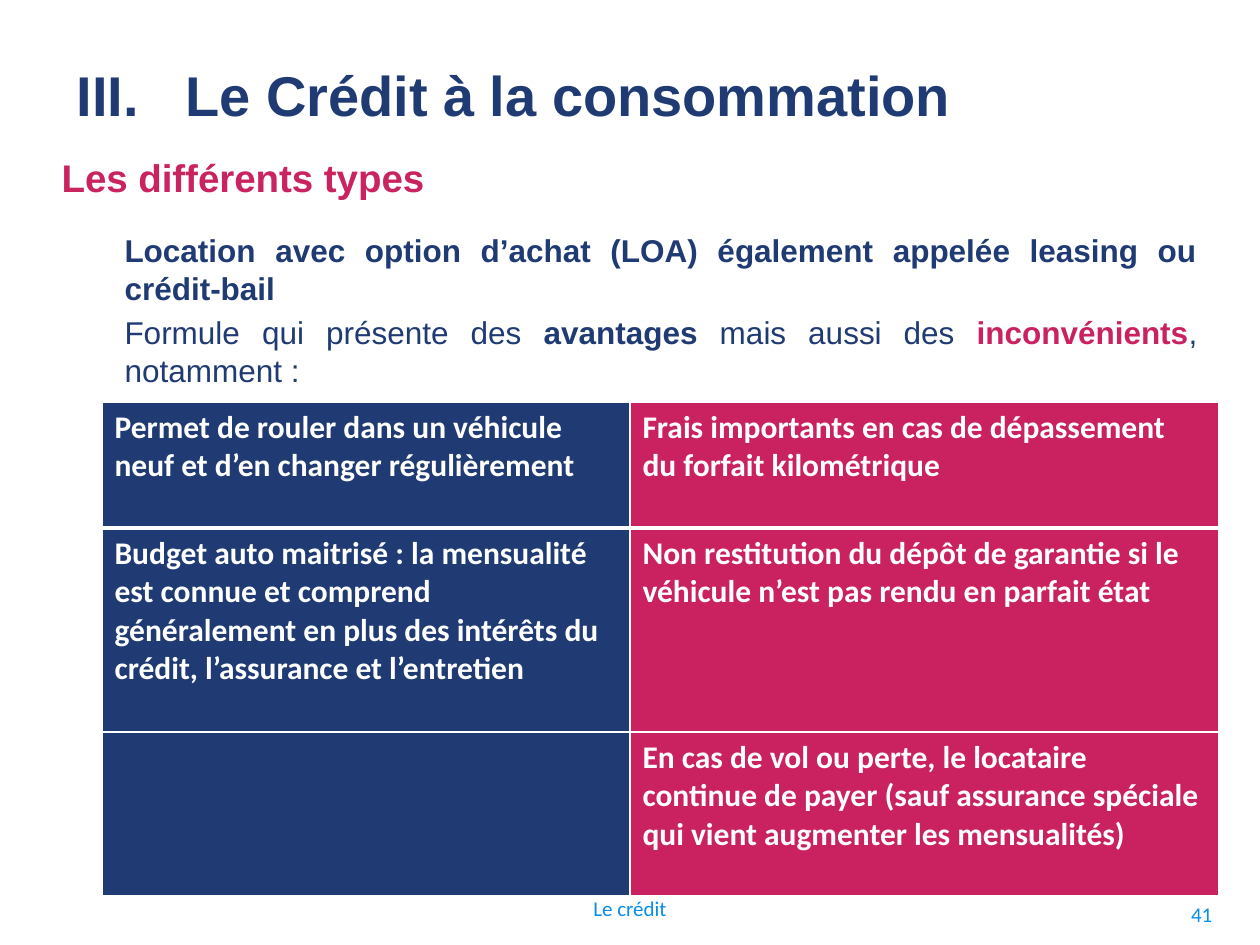
from dataclasses import dataclass

from lxml import etree
from pptx import Presentation
from pptx.dml.color import RGBColor
from pptx.enum.text import MSO_ANCHOR, PP_ALIGN
from pptx.oxml.ns import qn
from pptx.util import Inches, Pt

LEFT, CENTER, RIGHT, JUSTIFY = PP_ALIGN.LEFT, PP_ALIGN.CENTER, PP_ALIGN.RIGHT, PP_ALIGN.JUSTIFY
TOP, MIDDLE = MSO_ANCHOR.TOP, MSO_ANCHOR.MIDDLE


@dataclass(frozen=True)
class Theme:
    navy: str = "203B73"
    pink: str = "CA2260"
    heading_pink: str = "C92360"
    azure: str = "078EE9"
    white: str = "FFFFFF"
    heading_font: str = "Arial"
    table_font: str = "Calibri"
    title_size: int = 32
    subtitle_size: int = 22
    body_size: int = 18
    footer_size: int = 12


THEME = Theme()


@dataclass(frozen=True)
class Span:
    text: str
    size: int = THEME.body_size
    color: str = THEME.navy
    bold: bool = False
    font: str = THEME.heading_font


@dataclass(frozen=True)
class Line:
    spans: tuple[Span, ...]
    align: PP_ALIGN = LEFT
    before: float = 0
    indent: float = 0


@dataclass(frozen=True)
class Block:
    left: float
    top: float
    width: float
    height: float
    lines: tuple[Line, ...]
    anchor: MSO_ANCHOR = TOP


def write_line(paragraph, line: Line) -> None:
    if line.indent:
        properties = paragraph._p.get_or_add_pPr()
        properties.set("marL", str(Inches(line.indent)))
        properties.set("indent", "0")
    paragraph.alignment = line.align
    paragraph.space_before = Pt(line.before)
    for span in line.spans:
        run = paragraph.add_run()
        run.text = span.text
        run.font.name = span.font
        run.font.size = Pt(span.size)
        run.font.bold = span.bold
        run.font.color.rgb = RGBColor.from_string(span.color)


def draw_block(slide, block: Block) -> None:
    box = slide.shapes.add_textbox(
        Inches(block.left), Inches(block.top), Inches(block.width), Inches(block.height)
    )
    frame = box.text_frame
    frame.word_wrap = True
    frame.vertical_anchor = block.anchor
    for index, line in enumerate(block.lines):
        write_line(frame.add_paragraph() if index else frame.paragraphs[0], line)


def set_border(cell, side: str, width: float) -> None:
    edge = etree.SubElement(cell._tc.get_or_add_tcPr(), qn(f"a:ln{side}"), w=str(Pt(width)))
    fill = etree.SubElement(edge, qn("a:solidFill"))
    etree.SubElement(fill, qn("a:srgbClr"), val=THEME.white)


def draw_comparison(slide, rows: tuple[tuple[str, str], ...]) -> None:
    widths, heights = (4.19, 4.67), (1.0, 1.62, 1.3)
    table = slide.shapes.add_table(
        len(rows), len(widths), Inches(0.81), Inches(3.19), Inches(sum(widths)), Inches(sum(heights))
    ).table
    table.first_row = table.horz_banding = False
    for column, width in zip(table.columns, widths):
        column.width = Inches(width)
    for row_index, (row, height) in enumerate(zip(rows, heights)):
        table.rows[row_index].height = Inches(height)
        borders = {"L": 1, "R": 1, "T": 3 if row_index == 1 else 1, "B": 3 if row_index == 0 else 1}
        for column_index, (text, color) in enumerate(zip(row, (THEME.navy, THEME.pink))):
            cell = table.cell(row_index, column_index)
            for side, width in borders.items():
                set_border(cell, side, width)
            cell.fill.solid()
            cell.fill.fore_color.rgb = RGBColor.from_string(color)
            if text:
                span = Span(text, color=THEME.white, bold=True, font=THEME.table_font)
                write_line(cell.text_frame.paragraphs[0], Line((span,)))


def footer_line(text: str, align: PP_ALIGN) -> Line:
    return Line((Span(text, THEME.footer_size, THEME.azure, font=THEME.table_font),), align)


BLOCKS = (
    Block(8.62, 7.06, 1.1, 0.39, (footer_line("41", RIGHT),), MIDDLE),
    Block(2.44, 7.06, 5.12, 0.39, (footer_line("Le crédit", CENTER),)),
    Block(0.51, 0, 9.22, 1.5, (
        Line((Span("III.   Le Crédit à la consommation", THEME.title_size, bold=True),)),
    ), MIDDLE),
    Block(0.39, 1.17, 9.21, 6.3, (
        Line((Span("Les différents types", THEME.subtitle_size, THEME.heading_pink, True),)),
        Line((
            Span("Location avec option d’achat (LOA) également appelée leasing ou crédit-bail", bold=True),
        ), JUSTIFY, 18, 0.5),
        Line((
            Span("Formule qui présente des "),
            Span("avantages", bold=True),
            Span(" mais aussi des "),
            Span("inconvénients", color=THEME.pink, bold=True),
            Span(", notamment :"),
        ), JUSTIFY, 3.6, 0.5),
    )),
)

COMPARISON = (
    (
        "Permet de rouler dans un véhicule neuf et d’en changer régulièrement",
        "Frais importants en cas de dépassement du forfait kilométrique",
    ),
    (
        "Budget auto maitrisé : la mensualité est connue et comprend généralement "
        "en plus des intérêts du crédit, l’assurance et l’entretien",
        "Non restitution du dépôt de garantie si le véhicule n’est pas rendu en parfait état",
    ),
    (
        "",
        "En cas de vol ou perte, le locataire continue de payer "
        "(sauf assurance spéciale qui vient augmenter les mensualités)",
    ),
)


def main() -> None:
    presentation = Presentation()
    presentation.slide_width, presentation.slide_height = Inches(10), Inches(7.5)
    slide = presentation.slides.add_slide(presentation.slide_layouts[6])
    for block in BLOCKS:
        draw_block(slide, block)
    draw_comparison(slide, COMPARISON)
    presentation.save("out.pptx")


if __name__ == "__main__":
    main()
